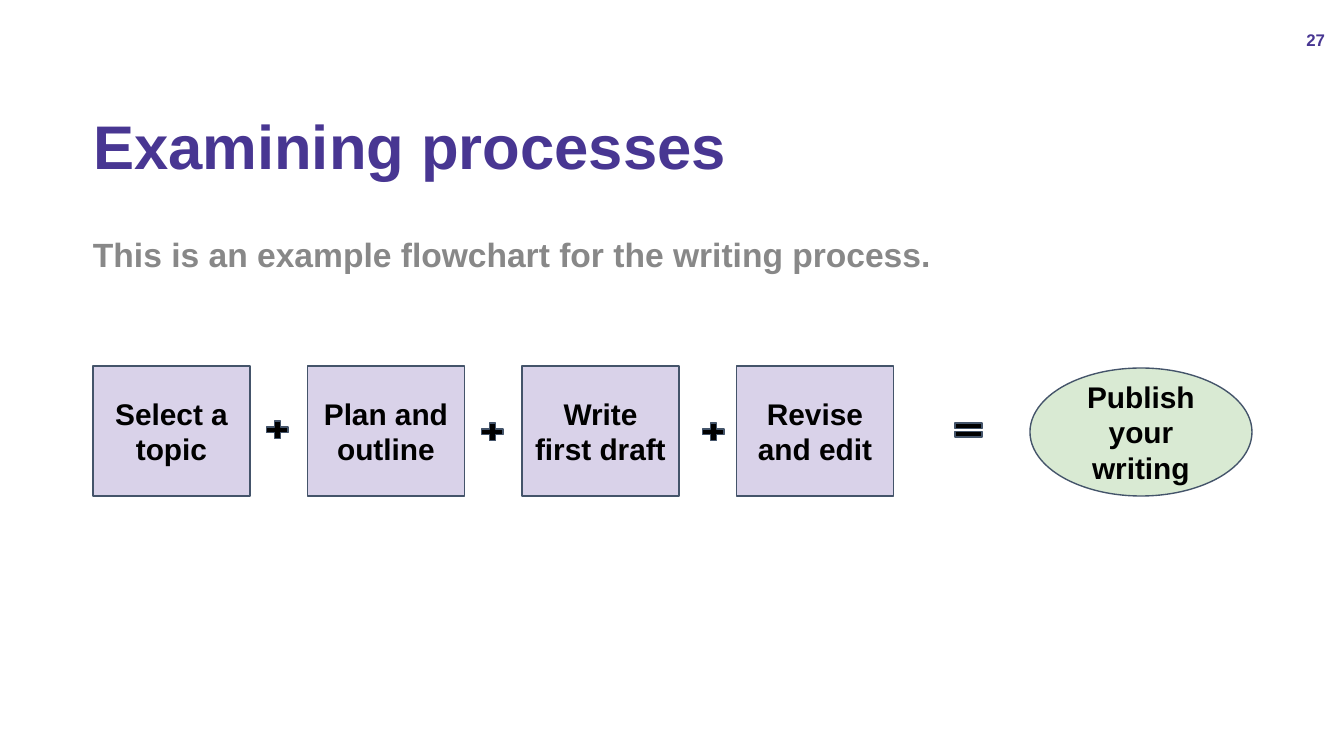
from pptx import Presentation
from pptx.dml.color import RGBColor
from pptx.enum.shapes import MSO_SHAPE as Shape
from pptx.enum.text import MSO_ANCHOR as Anchor, PP_ALIGN as Align
from pptx.util import Emu, Pt

PURPLE, GREY, BLACK = "483692", "888888", "000000"
LILAC, GREEN, SLATE = "D9D2E9", "D9EAD3", "44546A"
STEPS = ["Select a topic", "Plan and outline", "Write first draft", "Revise and edit"]
LEFT, CONTENT_WIDTH = 93, 1159
STEP_TOP, STEP_WIDTH, STEP_HEIGHT, STEP_PITCH = 366, 157, 130, 214.5
PLUSES = [(263, 418), (478, 420), (699, 420)]


def px(length):
    return Emu(round(length * 914400 / 134.4))


def color(code):
    return RGBColor.from_string(code)


def set_text(box, text, size, ink, align, anchor, insets, spacing=None):
    frame = box.text_frame
    frame.word_wrap = True
    frame.vertical_anchor = anchor
    (frame.margin_left, frame.margin_top,
     frame.margin_right, frame.margin_bottom) = map(px, insets)
    para = frame.paragraphs[0]
    para.text = text
    para.alignment = align
    para.line_spacing = spacing
    para.space_before = Pt(0)
    font = para.font
    font.name, font.size, font.bold = "Arial", Pt(size), True
    font.color.rgb = color(ink)


def add_title(page, text):
    title = page.shapes.title
    title.left, title.top = px(LEFT), px(43)
    title.width, title.height = px(CONTENT_WIDTH), px(147)
    set_text(title, text, 33, PURPLE, Align.LEFT, Anchor.BOTTOM, (0, 5, 10, 7), 0.9)


def add_text(page, bounds, *style):
    box = page.shapes.add_textbox(*map(px, bounds))
    set_text(box, *style)


def add_figure(page, kind, bounds, fill):
    figure = page.shapes.add_shape(kind, *map(px, bounds))
    figure.shadow.inherit = False
    figure.fill.solid()
    figure.fill.fore_color.rgb = color(fill)
    figure.line.color.rgb = color(SLATE)
    figure.line.width = Pt(0.75)
    return figure


def add_step(page, kind, bounds, fill, text):
    step = add_figure(page, kind, bounds, fill)
    set_text(step, text, 16, BLACK, Align.CENTER, Anchor.MIDDLE, (13, 13, 13, 13))


def main():
    deck = Presentation()
    deck.slide_width, deck.slide_height = px(1344), px(756)
    page = deck.slides.add_slide(deck.slide_layouts[5])

    # Heading and introduction
    add_title(page, "Examining processes")
    add_text(page, (LEFT, 191, CONTENT_WIDTH, 480),
             "This is an example flowchart for the writing process.",
             18, GREY, Align.LEFT, Anchor.TOP, (0, 63, 10, 5), 0.9)

    # Steps and result
    for index, text in enumerate(STEPS):
        bounds = (LEFT + index * STEP_PITCH, STEP_TOP, STEP_WIDTH, STEP_HEIGHT)
        add_step(page, Shape.RECTANGLE, bounds, LILAC, text)
    add_step(page, Shape.OVAL, (1030, 368, 222, 128), GREEN, "Publish your writing")

    # Operators between them
    for left, top in PLUSES:
        add_figure(page, Shape.MATH_PLUS, (left, top, 29, 24), BLACK)
    add_figure(page, Shape.MATH_EQUAL, (950, 418, 37, 24), BLACK)

    # Page number
    add_text(page, (1278, 20, 57, 40), "27", 9, PURPLE,
             Align.RIGHT, Anchor.MIDDLE, (10, 5, 10, 5))
    deck.save("out.pptx")


if __name__ == "__main__":
    main()
